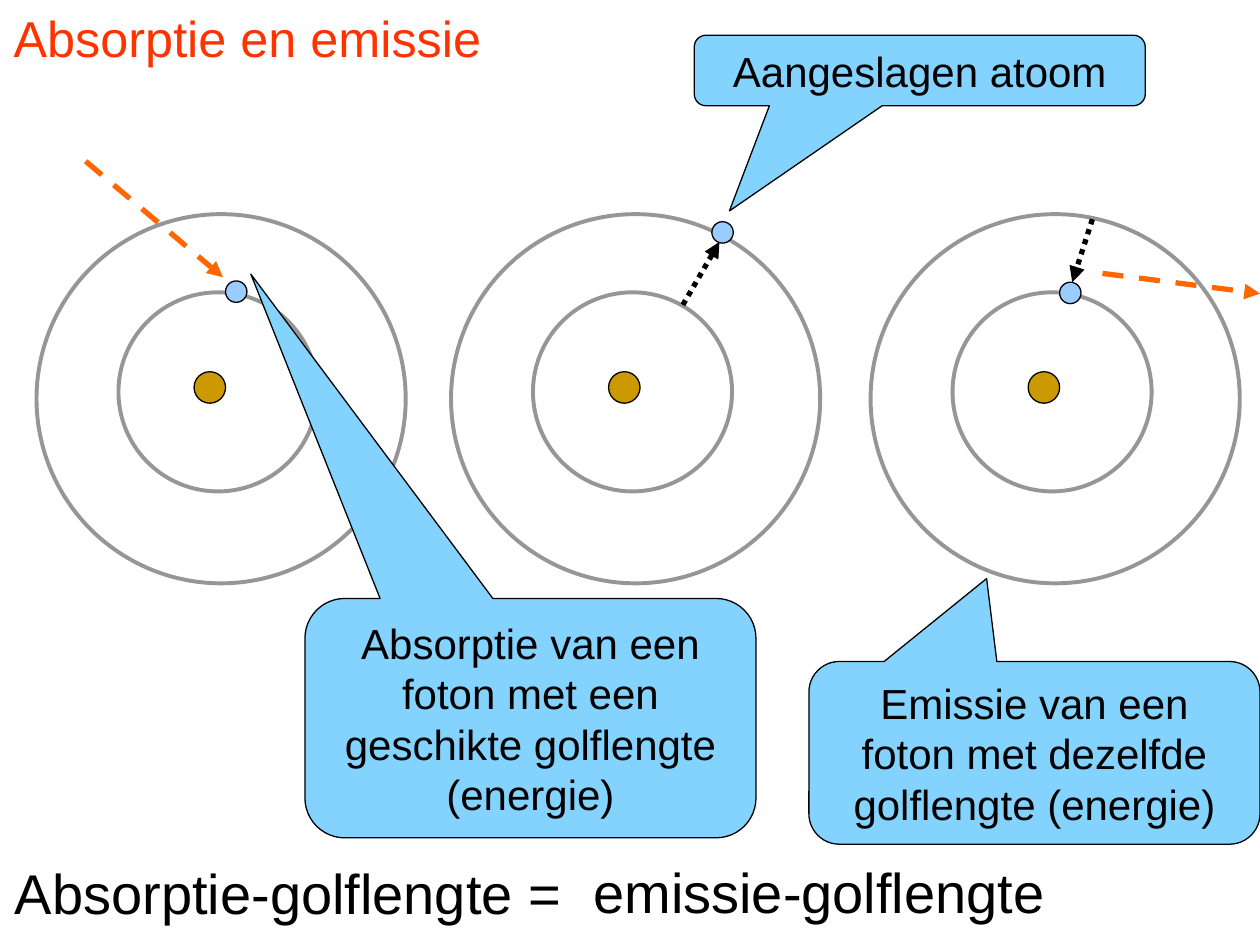
import pptx
import pptx.util
import pptx.dml.color
import pptx.enum.dml
import pptx.enum.shapes
import pptx.enum.text
import pptx.oxml
from pptx.oxml.ns import qn

Inches, Pt = pptx.util.Inches, pptx.util.Pt
RGBColor = pptx.dml.color.RGBColor
MSO_SHAPE = pptx.enum.shapes.MSO_SHAPE
DASH = pptx.enum.dml.MSO_LINE
PP_ALIGN = pptx.enum.text.PP_ALIGN
MIDDLE = pptx.enum.text.MSO_ANCHOR.MIDDLE

BLACK = RGBColor(0x00, 0x00, 0x00)
RED = RGBColor(0xFF, 0x33, 0x00)
ORANGE = RGBColor(0xFF, 0x66, 0x00)
GREY = RGBColor(0x96, 0x96, 0x96)
GOLD = RGBColor(0xCC, 0x99, 0x00)
ELECTRON_BLUE = RGBColor(0x99, 0xCC, 0xFF)
CALLOUT_BLUE = RGBColor(0x83, 0xD3, 0xFE)
FONT = "Arial"

# Content: text, left, top, width, height, size, colour
TEXTS = [
    ("Absorptie en emissie", 0.01, 0, 9.81, 0.6, 28.8, RED),
    ("Absorptie-golflengte =", 0.02, 6.65, 5.61, 0.86, 32, BLACK),
    ("emissie-golflengte", 4.61, 6.65, 4.21, 0.85, 32, BLACK),
]
# Left of the atom, then left and top of its electron
ATOMS = [(0.29, 1.79, 2.23), (3.58, 5.65, 1.76), (6.91, 8.41, 2.24)]
# Offset from the atom's left, top, diameter, fill, line colour, line width
ATOM_PARTS = [
    (1.25, 2.95, 0.25, GOLD, BLACK, 0.75),
    (0.65, 2.32, 1.58, None, GREY, 2.25),
    (0, 1.7, 2.93, None, GREY, 2.25),
]
ELECTRON_SIZE = 0.17
# Text, left, top, height, pointer tip relative to the box
CALLOUT_WIDTH = 3.58
CALLOUTS = [
    ("Absorptie van een foton met een geschikte golflengte (energie)",
     2.42, 4.75, 1.9, (-0.62, -1.855)),
    ("Aangeslagen atoom", 5.51, 0.28, 0.56, (-0.422, 1.991)),
    ("Emissie van een foton met dezelfde golflengte (energie)",
     6.42, 5.25, 1.45, (-0.106, -0.954)),
]
# Start, end, colour, dash
ARROWS = [
    ((0.68, 1.28), (1.77, 2.2), ORANGE, DASH.DASH),
    ((8.75, 2.17), (10, 2.33), ORANGE, DASH.DASH),
    ((5.42, 2.42), (5.71, 1.92), BLACK, DASH.ROUND_DOT),
    ((8.67, 1.74), (8.51, 2.24), BLACK, DASH.ROUND_DOT),
]


def add_shape(slide, kind, box, fill, line, width):
    sp = slide.shapes.add_shape(kind, *map(Inches, box))
    sp.shadow.inherit = False
    if fill is None:
        sp.fill.background()
    else:
        sp.fill.solid()
        sp.fill.fore_color.rgb = fill
    sp.line.color.rgb = line
    sp.line.width = Pt(width)
    return sp


def set_text(sp, text, size, color, align):
    tf = sp.text_frame
    tf.word_wrap = True
    tf.vertical_anchor = MIDDLE
    p = tf.paragraphs[0]
    p.text = text
    p.alignment = align
    p.font.name = FONT
    p.font.size = Pt(size)
    p.font.color.rgb = color


def add_arrow(slide, start, end, color, dash):
    line = slide.shapes.add_connector(
        pptx.enum.shapes.MSO_CONNECTOR.STRAIGHT, *map(Inches, start + end))
    line.line.color.rgb = color
    line.line.width = Pt(3)
    line.line.dash_style = dash
    ln = line.line._get_or_add_ln()
    ln.append(ln.makeelement(qn("a:tailEnd"), {"type": "triangle"}))
    sp_pr = ln.getparent()
    sp_pr.append(sp_pr.makeelement(qn("a:effectLst"), {}))


def main():
    prs = pptx.Presentation()
    prs.slide_width, prs.slide_height = Inches(10), Inches(7.5)
    slide = prs.slides.add_slide(prs.slide_layouts[6])

    # Atoms: nucleus, two shells and one electron
    for left, electron_x, electron_y in ATOMS:
        for dx, top, size, fill, line, width in ATOM_PARTS:
            add_shape(slide, MSO_SHAPE.OVAL, (left + dx, top, size, size),
                      fill, line, width)
        add_shape(slide, MSO_SHAPE.OVAL,
                  (electron_x, electron_y, ELECTRON_SIZE, ELECTRON_SIZE),
                  ELECTRON_BLUE, BLACK, 0.75)

    # Callouts
    for text, left, top, height, tip in CALLOUTS:
        sp = add_shape(slide, MSO_SHAPE.ROUNDED_RECTANGULAR_CALLOUT,
                       (left, top, CALLOUT_WIDTH, height),
                       CALLOUT_BLUE, BLACK, 0.75)
        sp.adjustments[0], sp.adjustments[1] = tip
        set_text(sp, text, 24, BLACK, PP_ALIGN.CENTER)

    # Photon paths and electron jumps
    for arrow in ARROWS:
        add_arrow(slide, *arrow)

    # Title and conclusion
    for text, left, top, width, height, size, color in TEXTS:
        sp = slide.shapes.add_textbox(*map(Inches, (left, top, width, height)))
        set_text(sp, text, size, color, PP_ALIGN.LEFT)

    prs.save("out.pptx")


if __name__ == "__main__":
    main()
